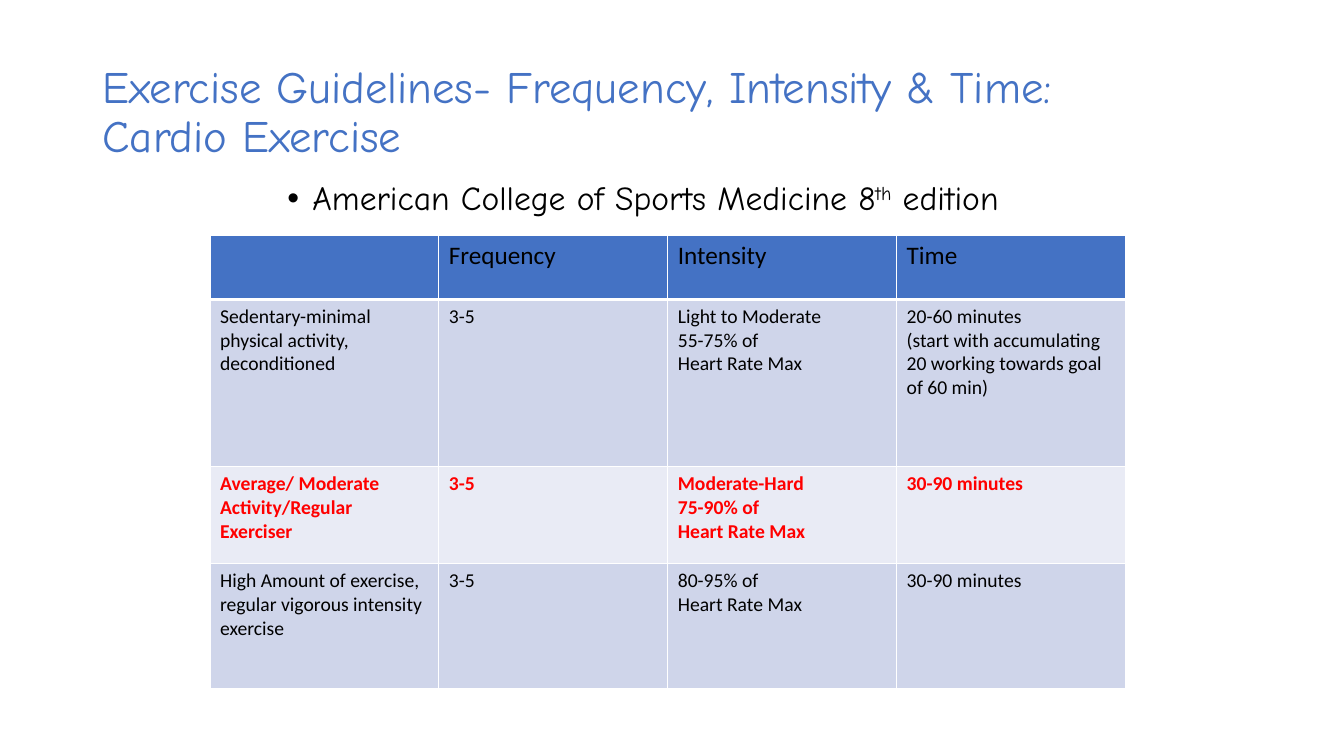
from lxml import etree
from pptx import Presentation
from pptx.dml.color import RGBColor
from pptx.enum import text as t
from pptx.oxml import ns
from pptx.util import Pt

HUES = {"blue": "4472C4", "band": "CFD5EA", "pale": "E9EBF5",
        "black": "000000", "red": "FF0000", "white": "FFFFFF"}


def style(run, face, size, hue, bold=False):
    run.font.name = face
    run.font.size = Pt(size)
    run.font.bold = bold
    run.font.color.rgb = RGBColor.from_string(HUES[hue])


def border(cell, side, width):
    props = cell._tc.get_or_add_tcPr()
    line = etree.SubElement(props, ns.qn("a:ln" + side), w=str(Pt(width)))
    fill = etree.SubElement(line, ns.qn("a:solidFill"))
    etree.SubElement(fill, ns.qn("a:srgbClr"), val=HUES["white"])


prs = Presentation()
prs.slide_width, prs.slide_height = Pt(960), Pt(540)
slide = prs.slides.add_slide(prs.slide_layouts[1])

title, body = slide.placeholders
title.left, title.top, title.width, title.height = Pt(66), Pt(28.75), Pt(828), Pt(104.4)
frame = title.text_frame
frame.text = "Exercise Guidelines- Frequency, Intensity & Time:\vCardio Exercise"
frame.auto_size = t.MSO_AUTO_SIZE.NONE
frame.vertical_anchor = t.MSO_ANCHOR.MIDDLE
para = frame.paragraphs[0]
para.alignment = t.PP_ALIGN.LEFT
para.line_spacing = 0.9
for run in para.runs:
    style(run, "Comic Neue", 32, "blue")

body.left, body.top, body.width, body.height = Pt(162), Pt(126), Pt(648), Pt(356.4)
frame = body.text_frame
frame.auto_size = t.MSO_AUTO_SIZE.NONE
para = frame.paragraphs[0]
para.level = 1
props = para._p.get_or_add_pPr()
props.set("marL", str(Pt(54)))
props.set("indent", str(Pt(-18)))
etree.SubElement(props, ns.qn("a:buFont"), typeface="Arial")
etree.SubElement(props, ns.qn("a:buChar"), char="•")
para.line_spacing = 0.9
para.space_before = Pt(0)
for words, base in (("American College of Sports Medicine 8", 0), ("th", 30000), (" edition", 0)):
    run = para.add_run()
    run.text = words
    style(run, "Comic Neue", 24, "black")
    if base:
        run._r.get_or_add_rPr().set("baseline", str(base))

rows = [
    ["", "Frequency", "Intensity", "Time"],
    ["Sedentary-minimal physical activity, deconditioned", "3-5",
     "Light to Moderate\n55-75% of\nHeart Rate Max",
     "20-60 minutes\n(start with accumulating 20 working towards goal of 60 min)"],
    ["Average/ Moderate Activity/Regular Exerciser", "3-5",
     "Moderate-Hard\n75-90% of\nHeart Rate Max", "30-90 minutes"],
    ["High Amount of exercise, regular vigorous intensity exercise", "3-5",
     "80-95% of\nHeart Rate Max", "30-90 minutes"],
]
looks = [(46, "blue", 18, "black"), (119.5, "band", 14, "black"),
         (69.25, "pale", 14, "red"), (89.25, "band", 14, "black")]
table = slide.shapes.add_table(4, 4, Pt(150), Pt(168), Pt(654), Pt(324)).table
for col in table.columns:
    col.width = Pt(163.5)
for row, words, (high, fill, size, hue) in zip(table.rows, rows, looks):
    row.height = Pt(high)
    for cell, word in zip(row.cells, words):
        for side in "LRTB":
            border(cell, side, 3 if side == "B" and fill == "blue" else 1)
        cell.fill.solid()
        cell.fill.fore_color.rgb = RGBColor.from_string(HUES[fill])
        cell.text_frame.text = word
        for para in cell.text_frame.paragraphs:
            for run in para.runs:
                style(run, "Calibri", size, hue, hue == "red")

prs.save("out.pptx")
